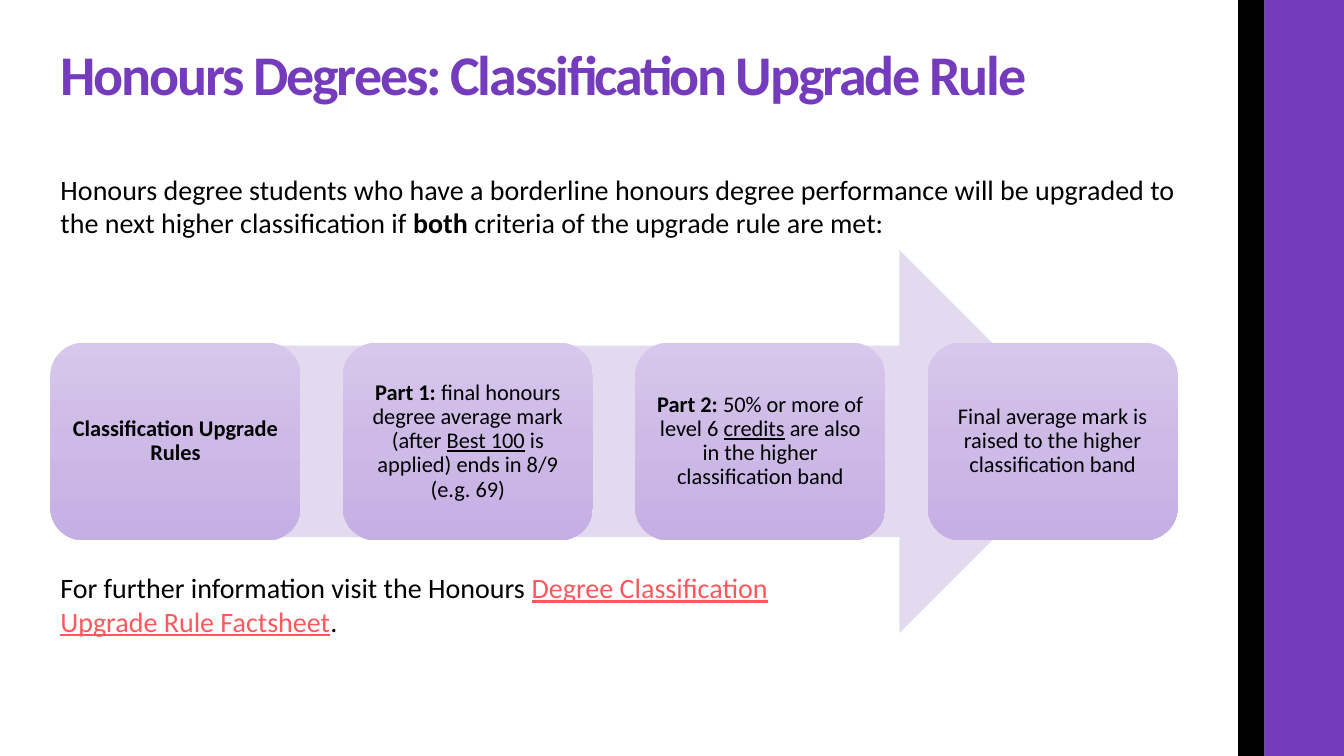
"""Build the slide on the honours degree classification upgrade rule."""
import copy

import pptx
import pptx.dml.color
import pptx.enum.shapes
import pptx.enum.text
import pptx.oxml.ns
import pptx.util

Inches = pptx.util.Inches
Pt = pptx.util.Pt
Shape = pptx.enum.shapes.MSO_SHAPE
Align = pptx.enum.text.PP_ALIGN
Anchor = pptx.enum.text.MSO_ANCHOR
qn = pptx.oxml.ns.qn

THEME = {
    "font": "Calibri", "title": 40, "body": 20, "step": 16,
    "purple": "753BBD", "black": "000000", "link": "FF585D", "arrow": "E3DAF0",
    "fade": [(0, "D7C7EC"), (0.5, "CDBAE6"), (1, "C6AFE5")],
}
BOLD = {"bold": True}
LINE = {"underline": True}


def color(name):
    return pptx.dml.color.RGBColor.from_string(THEME.get(name, name))


def write(frame, runs, size, tone="black", align=Align.LEFT, space=1.0,
          inset=(0.1, 0.05), anchor=Anchor.TOP):
    side, edge = map(Inches, inset)
    look = {"word_wrap": True, "auto_size": pptx.enum.text.MSO_AUTO_SIZE.NONE,
            "vertical_anchor": anchor, "margin_left": side, "margin_right": side,
            "margin_top": edge, "margin_bottom": edge}
    for key, value in look.items():
        setattr(frame, key, value)
    para = frame.paragraphs[0]
    layout = {"alignment": align, "line_spacing": space, "space_before": Pt(0)}
    for key, value in layout.items():
        setattr(para, key, value)
    for text, extra in runs:
        run = para.add_run()
        run.text = text
        form = {"name": THEME["font"], "size": Pt(THEME[size]), "bold": False, **extra}
        shade = form.pop("tone", tone)
        for key, value in form.items():
            setattr(run.font, key, value)
        run.font.color.rgb = color(shade)
    return para


deck = pptx.Presentation()
deck.slide_width, deck.slide_height = Inches(13.33), Inches(7.5)
slide = deck.slides.add_slide(deck.slide_layouts[1])
shapes = slide.shapes
title, body = slide.placeholders

for holder, top, height in [(title, 0.42, 0.76), (body, 1.66, 0.91)]:
    holder.left, holder.top = Inches(0.5), Inches(top)
    holder.width, holder.height = Inches(11.31), Inches(height)

head = write(title.text_frame, [("Honours Degrees: Classification Upgrade Rule", BOLD)],
             "title", "purple", space=0.9)
head.runs[0].font._element.set("spc", "-150")

props = body.text_frame.paragraphs[0]._p.get_or_add_pPr()
props.set("marL", "0")
props.set("indent", "0")
props.append(pptx.oxml.parse_xml(
    '<a:buNone xmlns:a="http://schemas.openxmlformats.org/drawingml/2006/main"/>'))
write(body.text_frame, [
    ("Honours degree students who have a borderline honours degree performance "
     "will be upgraded to the next higher classification if ", {}),
    ("both", BOLD),
    (" criteria of the upgrade rule are met:", {}),
], "body")

for kind, left, top, width, height, tone in [
    (Shape.RECTANGLE, 12.54, 0, 0.79, 7.5, "purple"),
    (Shape.RECTANGLE, 12.28, 0, 0.26, 7.5, "black"),
    (Shape.RIGHT_ARROW, 1.32, 2.48, 9.5, 3.8, "arrow"),
]:
    block = shapes.add_shape(kind, *map(Inches, (left, top, width, height)))
    block.shadow.inherit = False
    block.fill.solid()
    block.fill.fore_color.rgb = color(tone)
    block.line.fill.background()

steps = [
    [("Classification Upgrade Rules", BOLD)],
    [("Part 1:", BOLD), (" final honours degree average mark (after ", {}),
     ("Best 100", LINE), (" is applied) ends in 8/9 (e.g. 69)", {})],
    [("Part 2:", BOLD), (" 50% or more of level 6 ", {}),
     ("credits", LINE), (" are also in the higher classification band", {})],
    [("Final average mark is raised to the higher classification band", {})],
]
for index, runs in enumerate(steps):
    card = shapes.add_shape(Shape.ROUNDED_RECTANGLE, Inches(0.5 + 2.9 * index),
                            Inches(3.4), Inches(2.48), Inches(1.96))
    card.shadow.inherit = False
    card.line.fill.background()
    card.fill.gradient()
    card.fill.gradient_angle = 270
    stops = card._element.find(".//" + qn("a:gsLst"))
    stops.append(copy.deepcopy(stops[0]))
    for stop, (place, tone) in zip(card.fill.gradient_stops, THEME["fade"]):
        stop.position = place
        stop.color.rgb = color(tone)
    write(card.text_frame, runs, "step", align=Align.CENTER, space=0.9,
          inset=(0.07, 0.07), anchor=Anchor.MIDDLE)

note = shapes.add_textbox(Inches(0.5), Inches(5.61), Inches(8.03), Inches(1.02))
write(note.text_frame, [
    ("For further information visit the Honours ", {}),
    ("Degree Classification Upgrade Rule Factsheet", {"tone": "link", **LINE}),
    (".", {}),
], "body")

deck.save("out.pptx")
